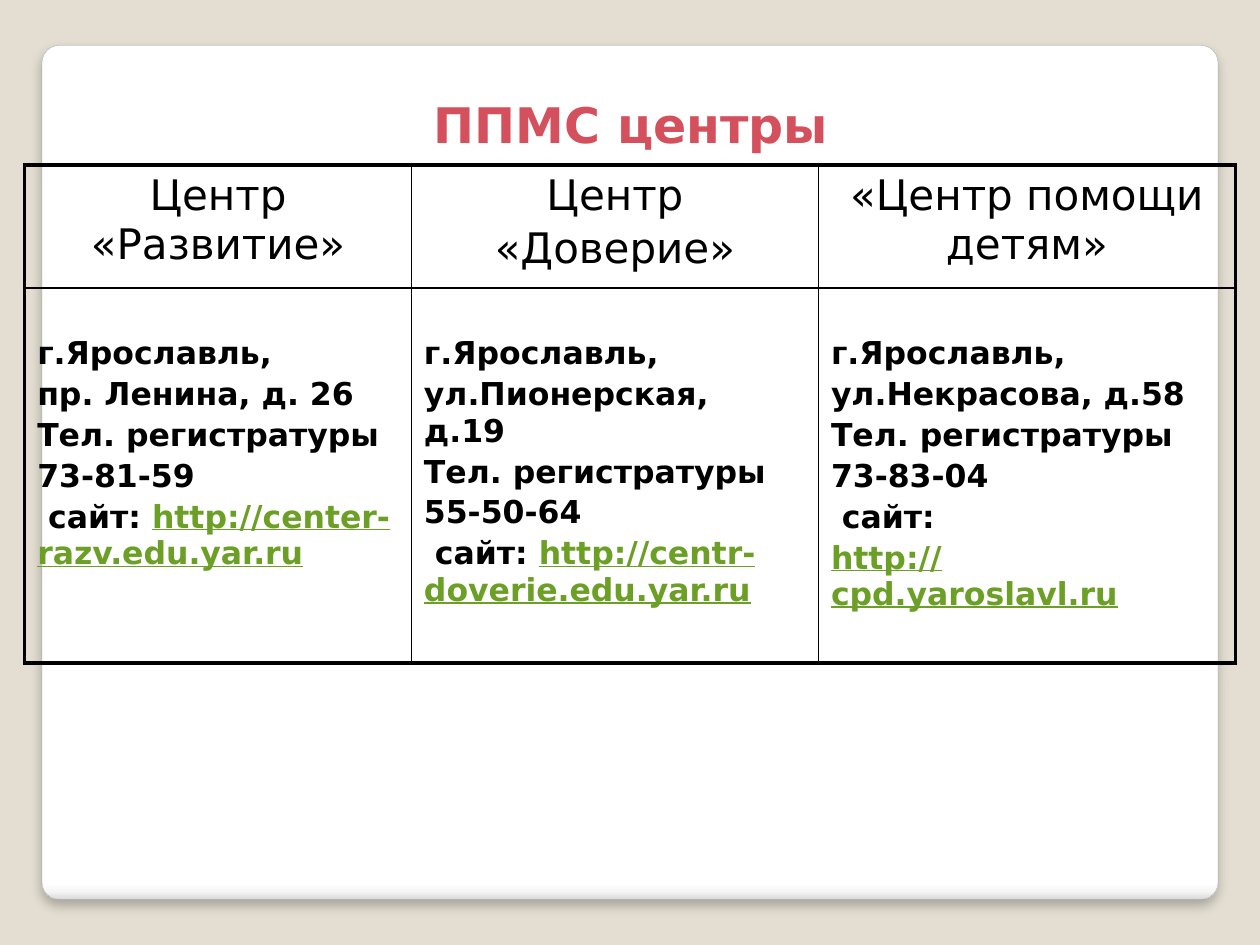
from lxml import etree
from pptx import Presentation
from pptx import util as u
from pptx.dml.color import RGBColor
from pptx.enum import shapes, text
from pptx.oxml import ns

Pt = u.Pt
BEIGE = RGBColor(0xE3, 0xDE, 0xD1)
WHITE = RGBColor(0xFF, 0xFF, 0xFF)
PALE = RGBColor(0xF7, 0xF7, 0xF7)
SILVER = RGBColor(0xDA, 0xDA, 0xDA)
GREY = RGBColor(0xA4, 0xA4, 0xA4)
RED = RGBColor(0xD4, 0x50, 0x5D)
GREEN = RGBColor(0x6B, 0x9F, 0x25)
BLACK = RGBColor(0, 0, 0)
THICK, THIN = 2.25, 1

CENTERS = [
    (["Центр «Развитие»"],
     ["пр. Ленина, д. 26", "Тел. регистратуры", "73-81-59"],
     [[" сайт: ", "http://center-razv.edu.yar.ru"]]),
    (["Центр", "«Доверие»"],
     ["ул.Пионерская, д.19", "Тел. регистратуры", "55-50-64"],
     [[" сайт: ", "http://centr-doverie.edu.yar.ru"]]),
    (["«Центр помощи детям»"],
     ["ул.Некрасова, д.58", "Тел. регистратуры", "73-83-04"],
     [[" сайт:"], ["http://cpd.yaroslavl.ru"]]),
]


def add_node(parent, tag, **attributes):
    node = etree.SubElement(parent, ns.qn(tag))
    for key, value in attributes.items():
        node.set(key, str(value))
    return node


def add_color(parent, color):
    return add_node(parent, "a:srgbClr", val=color)


class SlideBuilder:
    font = "DejaVu Sans"
    gap = 2.5

    def __init__(self, slide):
        self.slide = slide

    def background(self, color):
        fill = self.slide.background.fill
        fill.solid()
        fill.fore_color.rgb = color

    def panel(self, left, top, width, height, stops):
        panel = self.slide.shapes.add_shape(
            shapes.MSO_SHAPE.ROUNDED_RECTANGLE, Pt(left), Pt(top), Pt(width), Pt(height))
        panel.adjustments[0] = 0.02
        panel.fill.gradient()
        panel.fill.gradient_angle = 270
        properties = panel._element.spPr
        stop_list = properties.find(".//" + ns.qn("a:gsLst"))
        for stop in list(stop_list):
            stop_list.remove(stop)
        for percent, color in stops:
            add_color(add_node(stop_list, "a:gs", pos=percent * 1000), color)
        panel.line.color.rgb = GREY
        panel.line.width = Pt(0.16)
        panel.shadow.inherit = False
        effects = properties.find(ns.qn("a:effectLst"))
        shadow = add_node(effects, "a:outerShdw", blurRad=Pt(6), dist=Pt(4),
                          dir=5400000, algn="t", rotWithShape=0)
        add_node(add_color(shadow, BLACK), "a:alpha", val=25000)

    def paragraphs(self, frame, lines, size, bold=False, color=BLACK,
                   align=text.PP_ALIGN.LEFT):
        frame.word_wrap = True
        for index, pieces in enumerate(lines):
            paragraph = frame.add_paragraph() if index else frame.paragraphs[0]
            paragraph.alignment = align
            paragraph.space_before = Pt(self.gap if index else 0)
            for piece in pieces:
                is_address = piece.startswith("http")
                run = paragraph.add_run()
                run.text = piece
                run.font.name = self.font
                run.font.size = Pt(size)
                run.font.bold = bold
                run.font.underline = is_address
                run.font.color.rgb = GREEN if is_address else color

    def title(self, left, top, width, height, wording):
        frame = self.slide.shapes.add_textbox(
            Pt(left), Pt(top), Pt(width), Pt(height)).text_frame
        frame.vertical_anchor = text.MSO_ANCHOR.BOTTOM
        self.paragraphs(frame, [[wording]], 28, True, RED, text.PP_ALIGN.CENTER)

    def table(self, left, top, widths, heights):
        table = self.slide.shapes.add_table(
            len(heights), len(widths), Pt(left), Pt(top),
            Pt(sum(widths)), Pt(sum(heights))).table
        table.first_row = table.horz_banding = False
        for column, width in zip(table.columns, widths):
            column.width = Pt(width)
        for row, height in zip(table.rows, heights):
            row.height = Pt(height)
        last_row, last_column = len(heights) - 1, len(widths) - 1
        for r in range(len(heights)):
            for c in range(len(widths)):
                cell = table.cell(r, c)
                cell.fill.background()
                self.borders(cell, {"L": c == 0, "R": c == last_column,
                                    "T": r == 0, "B": r == last_row})
        return table

    def borders(self, cell, outer_sides):
        properties = cell._tc.get_or_add_tcPr()
        for position, (side, is_outer) in enumerate(outer_sides.items()):
            border = add_node(properties, "a:ln" + side, w=Pt(THICK if is_outer else THIN))
            add_color(add_node(border, "a:solidFill"), BLACK)
            properties.insert(position, border)


def main():
    deck = Presentation()
    deck.slide_width, deck.slide_height = Pt(720), Pt(540)
    builder = SlideBuilder(deck.slides.add_slide(deck.slide_layouts[6]))
    builder.background(BEIGE)
    builder.panel(24, 26, 672, 488, [(0, WHITE), (98, WHITE), (99, PALE), (100, SILVER)])
    builder.title(36.5, 15, 648, 76, "ППМС центры")
    contacts = builder.table(14.1, 94.2, [221, 232.6, 238.3], [70.4, 214.2])
    for column, (name, details, site) in enumerate(CENTERS):
        heading, address = contacts.cell(0, column), contacts.cell(1, column)
        builder.paragraphs(heading.text_frame, [[line] for line in name], 24,
                           align=text.PP_ALIGN.CENTER)
        address.margin_top = Pt(27.1)
        lines = [[line] for line in ["г.Ярославль,"] + details] + site
        builder.paragraphs(address.text_frame, lines, 18, True)
    contacts.cell(1, 1).margin_right = Pt(20)
    deck.save("out.pptx")


if __name__ == "__main__":
    main()
